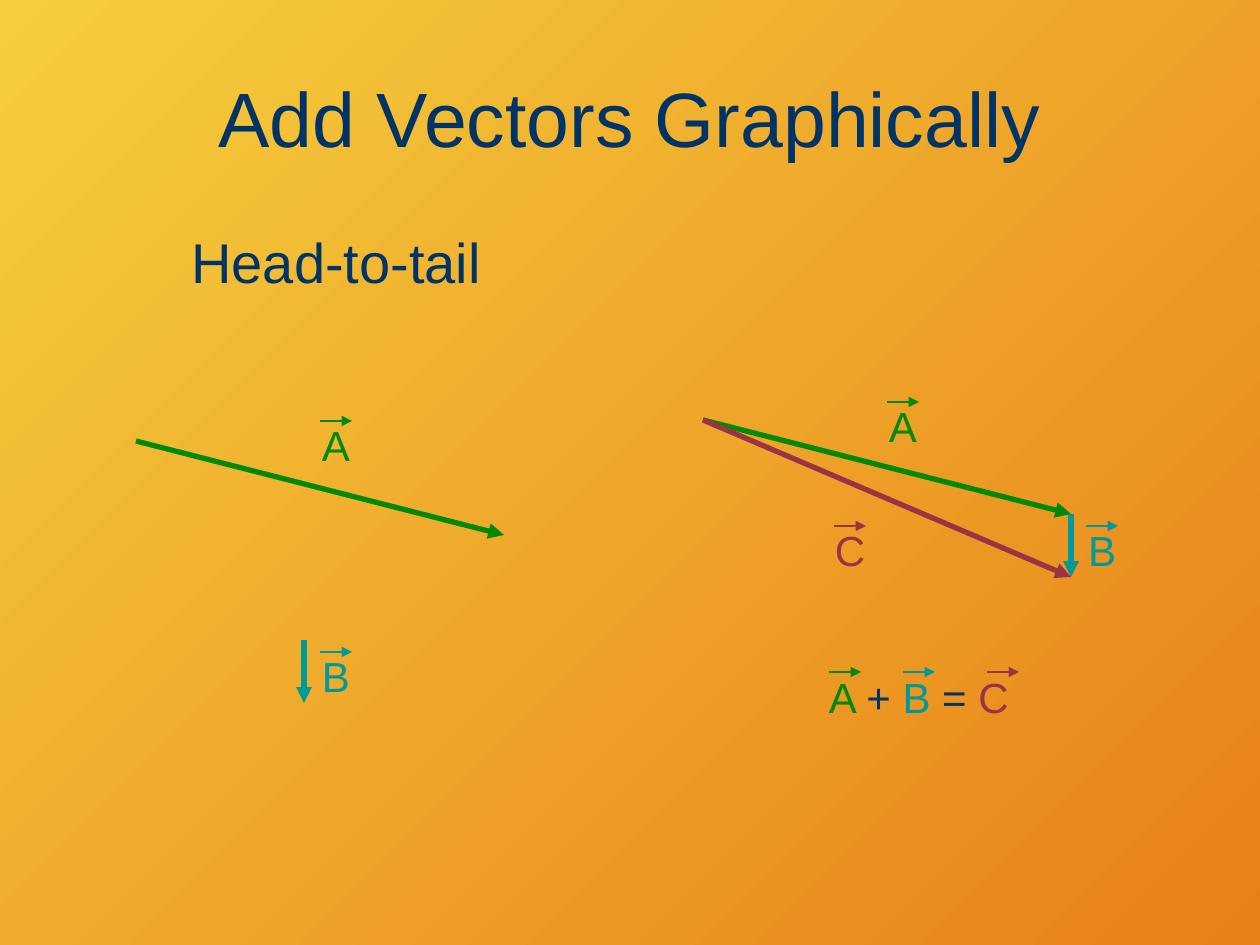
from dataclasses import dataclass

import pptx
import pptx.dml.color
import pptx.enum.dml
import pptx.enum.shapes
import pptx.enum.text
import pptx.oxml
import pptx.oxml.ns
import pptx.util

RGBColor = pptx.dml.color.RGBColor
Align = pptx.enum.text.PP_ALIGN
Anchor = pptx.enum.text.MSO_ANCHOR

PX_PER_INCH = 126
NAVY = RGBColor(0x00, 0x33, 0x66)
GREEN = RGBColor(0x00, 0x89, 0x01)
TEAL = RGBColor(0x00, 0x99, 0x99)
MAROON = RGBColor(0x9A, 0x33, 0x44)
YELLOW = RGBColor(0xF5, 0xCE, 0x3D)
ORANGE = RGBColor(0xE8, 0x80, 0x18)

LABEL_WIDTH, LABEL_HEIGHT = 42, 50
OVERLINE_LENGTH = 32


@dataclass(frozen=True)
class Vector:
    name: str
    color: RGBColor
    start: tuple[int, int]
    end: tuple[int, int]
    label: tuple[int, int]


VECTORS = [
    # Head-to-tail sum
    Vector("A", GREEN, (703, 420), (1071, 514), (882, 401)),
    Vector("C", MAROON, (703, 420), (1071, 577), (829, 525)),
    Vector("B", TEAL, (1071, 514), (1071, 577), (1081, 525)),
    # Separate vectors
    Vector("A", GREEN, (136, 441), (504, 535), (315, 420)),
    Vector("B", TEAL, (304, 640), (304, 703), (315, 651)),
]
EQUATION = [("A ", GREEN), ("+ ", NAVY), ("B ", TEAL), ("= ", NAVY), ("C", MAROON)]
EQUATION_OVERLINES = [(829, GREEN), (903, TEAL), (987, MAROON)]


def px(length: int) -> pptx.util.Emu:
    return pptx.util.Emu(round(length * 914400 / PX_PER_INCH))


def add_xml(parent, xml: str) -> None:
    """Append a DrawingML element given without its namespace declaration."""
    tag, rest = xml.split(" ", 1)
    namespace = pptx.oxml.ns.nsdecls("a")
    parent.append(pptx.oxml.parse_xml(f"{tag} {namespace} {rest}"))


def add_arrow(page, start: tuple[int, int], end: tuple[int, int],
              color: RGBColor, width: float) -> None:
    arrow = page.shapes.add_connector(
        pptx.enum.shapes.MSO_CONNECTOR.STRAIGHT, *map(px, start + end))
    arrow.line.color.rgb = color
    arrow.line.width = pptx.util.Pt(width)
    add_xml(arrow.line._get_or_add_ln(), '<a:tailEnd type="triangle"/>')
    add_xml(arrow._element.spPr, "<a:effectLst />")


def add_overline(page, left: int, top: int, color: RGBColor) -> None:
    add_arrow(page, (left, top), (left + OVERLINE_LENGTH, top), color, 0.75)


def add_text(page, spans: list[tuple[str, RGBColor]], *, at: tuple[int, int, int, int],
             size: int = 24, align=Align.LEFT, anchor=Anchor.TOP,
             inset: bool = False, space_before: int = 0) -> None:
    box = page.shapes.add_textbox(*map(px, at))
    frame = box.text_frame
    frame.word_wrap = True
    frame.vertical_anchor = anchor
    if not inset:
        frame.margin_left = frame.margin_right = 0
        frame.margin_top = frame.margin_bottom = 0
    para = frame.paragraphs[0]
    para.alignment = align
    if space_before:
        add_xml(para._p.get_or_add_pPr(),
                f'<a:spcBef ><a:spcPct val="{space_before * 1000}"/></a:spcBef>')
    for text, color in spans:
        span = para.add_run()
        span.text = text
        span.font.name = "Arial"
        span.font.size = pptx.util.Pt(size)
        span.font.color.rgb = color


def add_vector(page, vector: Vector) -> None:
    left, top = vector.label
    add_arrow(page, vector.start, vector.end, vector.color, 3)
    add_text(page, [(vector.name, vector.color)],
             at=(left, top, LABEL_WIDTH, LABEL_HEIGHT),
             align=Align.CENTER, space_before=50)
    add_overline(page, left + 5, top + 1, vector.color)


def set_background(page) -> None:
    fill = page.background.fill
    fill.gradient()
    fill.gradient_angle = 315  # counter-clockwise: top left to bottom right
    for stop, color in zip(fill.gradient_stops, (YELLOW, ORANGE)):
        stop.color.rgb = color


def main() -> None:
    deck = pptx.Presentation()
    deck.slide_width, deck.slide_height = px(1260), px(945)
    page = deck.slides.add_slide(deck.slide_layouts[6])
    set_background(page)

    # Headings
    add_text(page, [("Add Vectors Graphically", NAVY)], at=(63, 38, 1134, 158),
             size=44, align=Align.CENTER, anchor=Anchor.MIDDLE, inset=True)
    add_text(page, [("Head-to-tail", NAVY)], at=(179, 221, 325, 95),
             size=32, inset=True, space_before=20)

    # Vector diagrams
    for vector in VECTORS:
        add_vector(page, vector)

    # Equation
    add_text(page, EQUATION, at=(829, 672, 199, LABEL_HEIGHT), space_before=50)
    for left, color in EQUATION_OVERLINES:
        add_overline(page, left, 672, color)

    deck.save("out.pptx")


if __name__ == "__main__":
    main()
